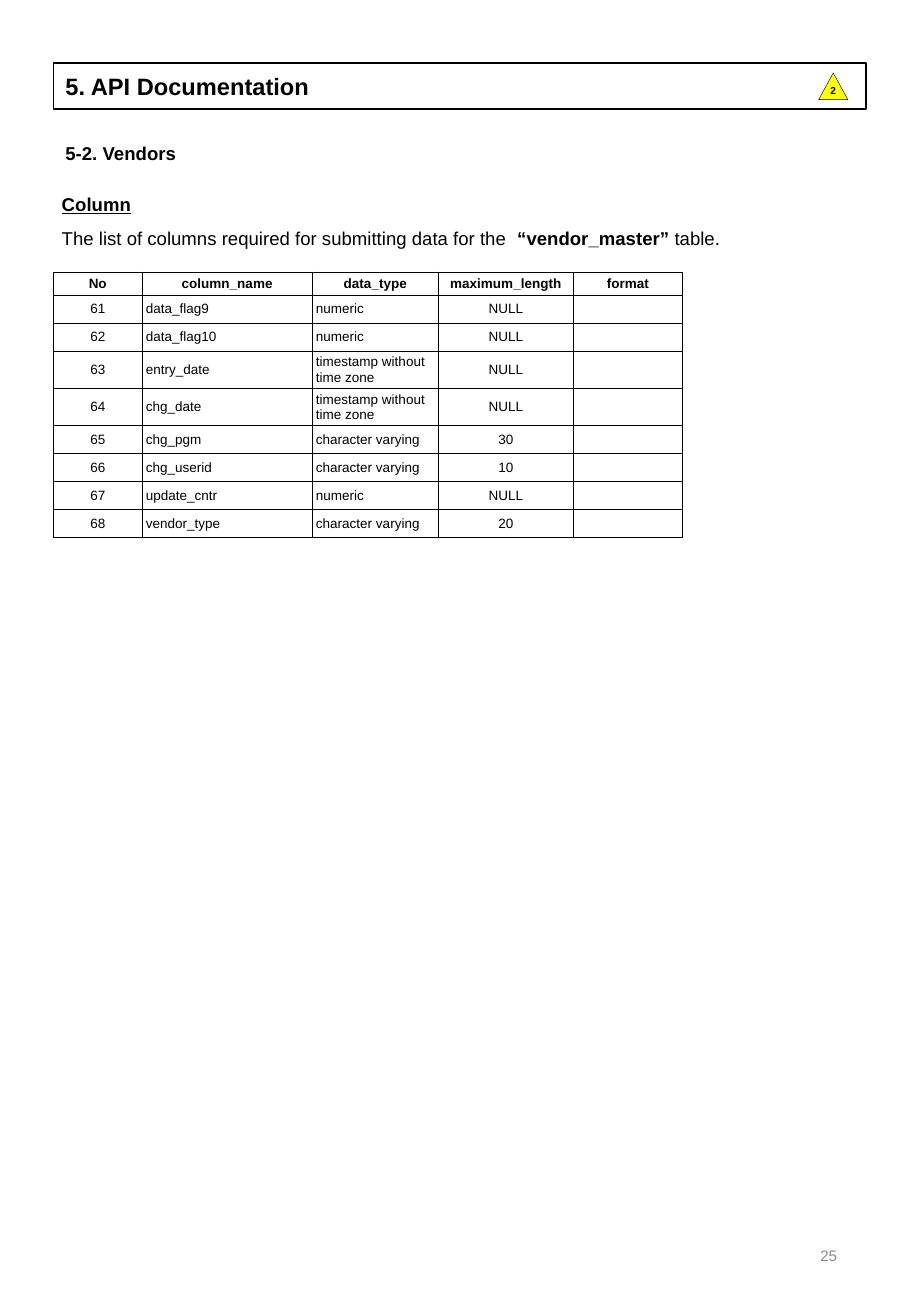
from lxml.etree import SubElement
from pptx import Presentation
from pptx.dml.color import RGBColor
from pptx.enum.shapes import MSO_SHAPE
from pptx.enum.text import MSO_ANCHOR, PP_ALIGN
from pptx.oxml.ns import qn
from pptx.util import Inches, Pt

FONT = "Arial"
COLORS = {"ink": "000000", "page_number": "8C8C8C", "badge": "FFFF00"}

TITLE = "5. API Documentation"
REVISION = "2"
SUBTITLE = "5-2. Vendors"
SECTION = "Column"
# Each part of the sentence with its bold setting
INTRO = [
    ("The list of columns required for submitting data for the  ", False),
    ("“vendor_master” ", True),
    ("table.", False),
]
PAGE_NUMBER = "25"

HEADERS = ["No", "column_name", "data_type", "maximum_length", "format"]
FIRST_NO = 61
VENDOR_COLUMNS = [
    ("data_flag9", "numeric", "NULL", ""),
    ("data_flag10", "numeric", "NULL", ""),
    ("entry_date", "timestamp without time zone", "NULL", ""),
    ("chg_date", "timestamp without time zone", "NULL", ""),
    ("chg_pgm", "character varying", "30", ""),
    ("chg_userid", "character varying", "10", ""),
    ("update_cntr", "numeric", "NULL", ""),
    ("vendor_type", "character varying", "20", ""),
]
COLUMN_WIDTHS = [0.73, 1.4, 1.04, 1.11, 0.9]
LEFT_ALIGNED = {"column_name", "data_type"}
HEADER_HEIGHT, ROW_HEIGHT = 0.19, 0.23

LEFT, CONTENT_WIDTH = 0.44, 6.69
TABLE_TOP = 2.24


def color(name):
    return RGBColor.from_string(COLORS[name])


def write(paragraph, text, size=8, bold=False, underline=False,
          ink="ink", align=PP_ALIGN.LEFT, spacing=None):
    """Add text to a paragraph; an empty one only gets its line size."""
    paragraph.alignment = align
    if spacing:
        paragraph.line_spacing = spacing
    if not text:
        SubElement(paragraph._p, qn("a:endParaRPr"), sz=str(size * 100))
        return
    run = paragraph.add_run()
    run.text = text
    font = run.font
    font.name, font.size = FONT, Pt(size)
    font.bold, font.underline = bold, underline
    font.color.rgb = color(ink)


def set_margins(target, left, top, right, bottom):
    target.margin_left, target.margin_top = Inches(left), Inches(top)
    target.margin_right, target.margin_bottom = Inches(right), Inches(bottom)


def add_text_frame(slide, *box, anchor=MSO_ANCHOR.TOP):
    frame = slide.shapes.add_textbox(*map(Inches, box)).text_frame
    frame.word_wrap = True
    frame.vertical_anchor = anchor
    return frame


def add_outlined_shape(slide, preset, *box, line_width, fill=None):
    shape = slide.shapes.add_shape(preset, *map(Inches, box))
    shape.shadow.inherit = False
    if fill:
        shape.fill.solid()
        shape.fill.fore_color.rgb = color(fill)
    else:
        shape.fill.background()
    shape.line.color.rgb = color("ink")
    shape.line.width = Pt(line_width)
    shape.text_frame.vertical_anchor = MSO_ANCHOR.MIDDLE
    return shape.text_frame


def add_borders(cell, width=0.75):
    properties = cell._tc.get_or_add_tcPr()
    for position, side in enumerate(("lnL", "lnR", "lnT", "lnB")):
        line = SubElement(properties, qn(f"a:{side}"), w=str(Pt(width)))
        fill = SubElement(line, qn("a:solidFill"))
        SubElement(fill, qn("a:srgbClr"), val=COLORS["ink"])
        properties.remove(line)
        properties.insert(position, line)


def add_column_table(slide):
    rows = [HEADERS] + [(str(number), *fields) for number, fields
                        in enumerate(VENDOR_COLUMNS, FIRST_NO)]
    heights = [HEADER_HEIGHT] + [ROW_HEIGHT] * len(VENDOR_COLUMNS)
    table = slide.shapes.add_table(
        len(rows), len(HEADERS), Inches(LEFT), Inches(TABLE_TOP),
        Inches(sum(COLUMN_WIDTHS)), Inches(sum(heights))).table
    table.first_row = table.horz_banding = False
    for column, width in zip(table.columns, COLUMN_WIDTHS):
        column.width = Inches(width)
    for r, (values, height) in enumerate(zip(rows, heights)):
        table.rows[r].height = Inches(height)
        is_header = r == 0
        for c, (header, value) in enumerate(zip(HEADERS, values)):
            cell = table.cell(r, c)
            set_margins(cell, 0.03, 0.02, 0.03, 0.02)
            cell.vertical_anchor = MSO_ANCHOR.MIDDLE
            cell.fill.background()
            add_borders(cell)
            at_left = header in LEFT_ALIGNED and not is_header
            write(cell.text_frame.paragraphs[0], value, bold=is_header,
                  align=PP_ALIGN.LEFT if at_left else PP_ALIGN.CENTER)


def main():
    deck = Presentation()
    deck.slide_width, deck.slide_height = Inches(7.5), Inches(10.83)
    slide = deck.slides.add_slide(deck.slide_layouts[6])

    page_number = add_text_frame(slide, 5.3, 10.04, 1.69, 0.58,
                                 anchor=MSO_ANCHOR.MIDDLE)
    write(page_number.paragraphs[0], PAGE_NUMBER, size=9,
          ink="page_number", align=PP_ALIGN.RIGHT)

    title = add_outlined_shape(slide, MSO_SHAPE.RECTANGLE, LEFT, 0.52,
                               CONTENT_WIDTH, 0.38, line_width=1)
    write(title.paragraphs[0], TITLE, size=14, bold=True)

    subtitle = add_text_frame(slide, LEFT, 1.12, CONTENT_WIDTH, 0.29)
    write(subtitle.paragraphs[0], SUBTITLE, size=11, bold=True)

    section = add_text_frame(slide, 0.41, 1.45, CONTENT_WIDTH, 0.62)
    write(section.paragraphs[0], SECTION, size=11, bold=True,
          underline=True, spacing=1.5)
    intro = section.add_paragraph()
    for text, bold in INTRO:
        write(intro, text, size=11, bold=bold, spacing=1.5)

    add_column_table(slide)

    revision = add_outlined_shape(slide, MSO_SHAPE.ISOSCELES_TRIANGLE,
                                  6.74, 0.6, 0.24, 0.22,
                                  line_width=0.25, fill="badge")
    set_margins(revision, 0.1, 0, 0.1, 0.05)
    revision.word_wrap = False
    write(revision.paragraphs[0], REVISION, size=6, bold=True,
          align=PP_ALIGN.CENTER)

    deck.save("out.pptx")


if __name__ == "__main__":
    main()
